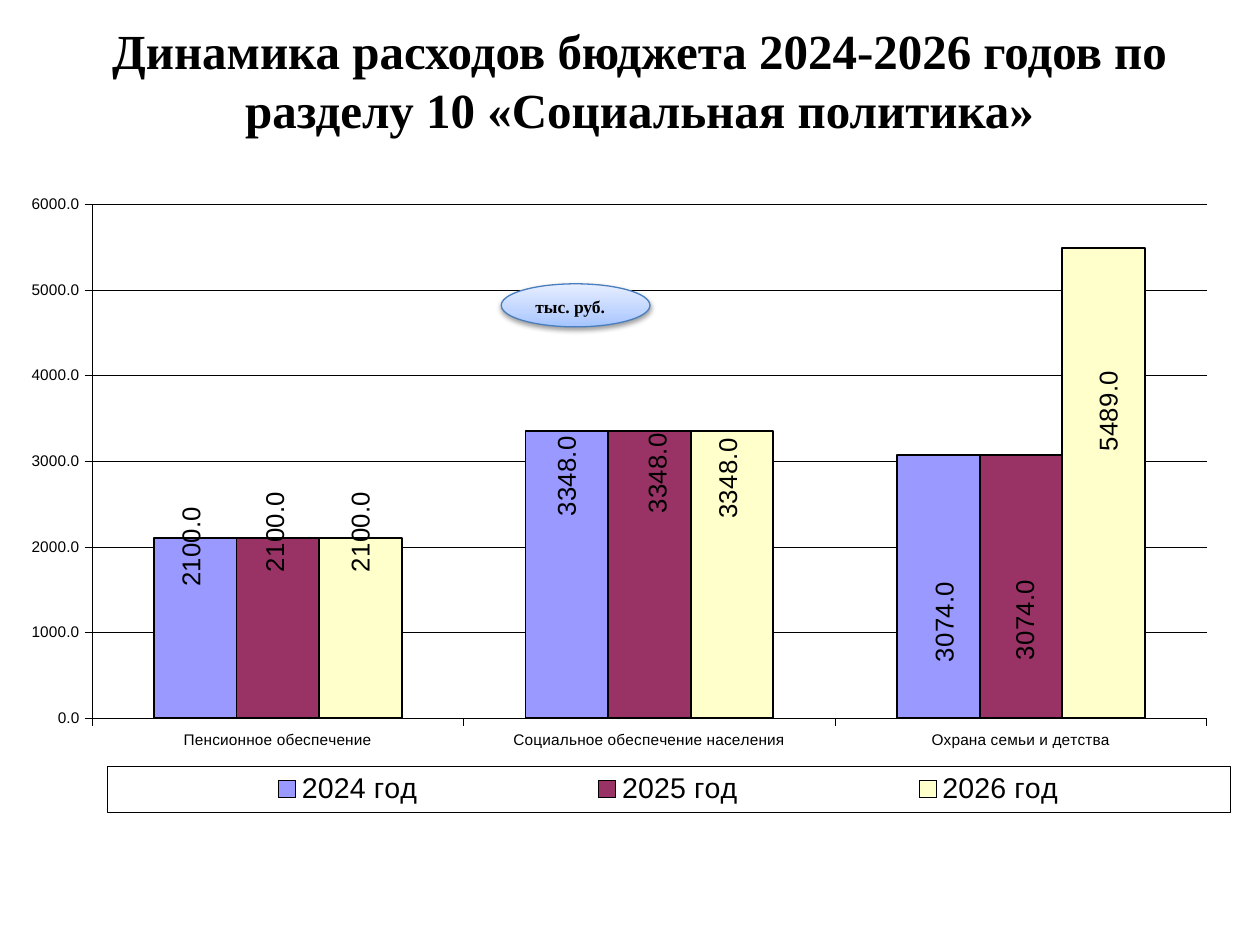
from pptx import Presentation
from pptx import util as u
from pptx.chart import data as chart_data
from pptx.dml import color
from pptx.enum import chart as kinds, shapes, text
from pptx.oxml import ns, parse_xml

COLORS = {
    "ink": "000000", "2024": "9999FF", "2025": "993366", "2026": "FFFFCC",
    "badge_low": "A4C4FF", "badge_mid": "BFD4FF", "badge_top": "E6EEFF",
    "badge_line": "4B7EBC",
}
CHART_BOX = (4.3, 103.7, 700, 362.2)
NUMBER_FORMAT = "0.0"
CATEGORIES = ["Пенсионное обеспечение", "Социальное обеспечение населения",
              "Охрана семьи и детства"]
SPENDING = {
    "2024": (2100, 3348, 3074),
    "2025": (2100, 3348, 3074),
    "2026": (2100, 3348, 5489),
}
LABEL_SHIFTS = {
    "2024": ((-2.3, -46.6), (0, -56.3), (3.4, 20.3)),
    "2025": ((-1.7, -55.1), (4.6, -58), (2.3, 19.1)),
    "2026": ((0, -55.1), (-2.3, -55.1), (2.9, -41.1)),
}


def rgb(name):
    """Return the named colour."""
    return color.RGBColor.from_string(COLORS[name])


def points(values):
    """Turn numbers into point lengths."""
    return [u.Pt(value) for value in values]


def style_font(font, size, name="Arial", bold=False):
    """Set a font's face, size, weight and ink."""
    font.name, font.size, font.bold = name, u.Pt(size), bold
    font.color.rgb = rgb("ink")


def style_line(line, width, name="ink"):
    """Set a line's colour and width."""
    line.color.rgb = rgb(name)
    line.width = u.Pt(width)


def write(frame, words, size, align):
    """Write one bold serif paragraph into a text frame."""
    frame.word_wrap = True
    para = frame.paragraphs[0]
    para.alignment = align
    span = para.add_run()
    span.text = words
    style_font(span.font, size, "Times New Roman", True)


def place(element, index, **parts):
    """Give a chart element a manual layout at a child index."""
    for old in element.findall(ns.qn("c:layout")):
        element.remove(old)
    body = "".join(f'<c:{tag} val="{value}"/>' for tag, value in parts.items())
    element.insert(index, parse_xml(
        f'<c:layout {ns.nsdecls("c")}><c:manualLayout>{body}</c:manualLayout></c:layout>'))


def add_title(page, words):
    """Add the centred slide title."""
    box = page.shapes.add_textbox(*points((36, 30.2, 658.8, 30.2)))
    box.text_frame.vertical_anchor = text.MSO_ANCHOR.MIDDLE
    write(box.text_frame, words, 28, text.PP_ALIGN.CENTER)


def style_axes(chart):
    """Style both axes and the gridlines."""
    for axis in (chart.category_axis, chart.value_axis):
        style_font(axis.tick_labels.font, 8.8)
        style_line(axis.format.line, 0.28)
        axis.major_tick_mark = kinds.XL_TICK_MARK.OUTSIDE
        axis.minor_tick_mark = kinds.XL_TICK_MARK.NONE
    chart.category_axis.tick_label_position = kinds.XL_TICK_LABEL_POSITION.LOW
    values = chart.value_axis
    values.minimum_scale, values.maximum_scale, values.major_unit = 0, 6000, 1000
    values.tick_labels.number_format = NUMBER_FORMAT
    values.tick_labels.number_format_is_linked = False
    values.has_major_gridlines = True
    style_line(values.major_gridlines.format.line, 0.28)


def style_label(label, shift):
    """Turn a data label upright and move it from the bar's centre."""
    style_font(label.font, 14.7)
    label.position = kinds.XL_LABEL_POSITION.CENTER
    element = label._dLbl
    body = element.find(".//" + ns.qn("a:bodyPr"))
    body.set("rot", "-5400000")
    body.set("vert", "horz")
    place(element, 1, x=round(shift[0] / CHART_BOX[2], 4),
          y=round(shift[1] / CHART_BOX[3], 4))


def hide_leader_lines(labels):
    """Switch off the lines that join moved labels to their bars."""
    element = labels._element
    for old in element.findall(ns.qn("c:showLeaderLines")):
        element.remove(old)
    element.append(parse_xml(f'<c:showLeaderLines {ns.nsdecls("c")} val="0"/>'))


def style_series(series, year):
    """Colour one year's bars and set its labels."""
    series.format.fill.solid()
    series.format.fill.fore_color.rgb = rgb(year)
    series.invert_if_negative = False
    style_line(series.format.line, 1.11)
    labels = series.data_labels
    labels.show_value = True
    labels.number_format = NUMBER_FORMAT
    labels.number_format_is_linked = False
    style_font(labels.font, 14.7)
    for index, shift in enumerate(LABEL_SHIFTS[year]):
        style_label(series.points[index].data_label, shift)
    hide_leader_lines(labels)


def style_legend(chart):
    """Show a framed legend below the plot."""
    chart.has_legend = True
    legend = chart.legend
    legend.position = kinds.XL_LEGEND_POSITION.BOTTOM
    legend.include_in_layout = False
    style_font(legend.font, 16.3)
    element = legend._element
    place(element, 1, xMode="edge", yMode="edge", x=0.081, y=0.922, w=0.917, h=0.073)
    element.find(ns.qn("c:txPr")).addprevious(parse_xml(
        f'<c:spPr {ns.nsdecls("c", "a")}><a:noFill/><a:ln w="{u.Pt(0.28)}"><a:solidFill>'
        f'<a:srgbClr val="{COLORS["ink"]}"/></a:solidFill></a:ln></c:spPr>'))


def add_spending_chart(page):
    """Add the clustered columns of spending by year."""
    figures = chart_data.CategoryChartData(number_format=NUMBER_FORMAT)
    figures.categories = CATEGORIES
    for year, values in SPENDING.items():
        figures.add_series(f"{year} год", values)
    chart = page.shapes.add_chart(
        kinds.XL_CHART_TYPE.COLUMN_CLUSTERED, *points(CHART_BOX), figures).chart
    chart.has_title = False
    style_font(chart.font, 8.8)
    plot = chart.plots[0]
    plot.gap_width, plot.overlap, plot.vary_by_categories = 150, 0, False
    style_axes(chart)
    for year, series in zip(SPENDING, plot.series):
        style_series(series, year)
    style_legend(chart)
    area = chart._chartSpace.find(".//" + ns.qn("c:plotArea"))
    place(area, 0, layoutTarget="inner", xMode="edge", yMode="edge",
          x=0.069, y=0.036, w=0.91, h=0.811)


def add_unit_badge(page, words):
    """Add the shaded ellipse that names the unit."""
    badge = page.shapes.add_shape(
        shapes.MSO_SHAPE.OVAL, *points((286.4, 162.2, 85, 24.6)))
    badge.fill.gradient()
    badge.fill.gradient_angle = 90
    stops = ((0, "badge_low"), (35, "badge_mid"), (100, "badge_top"))
    stop_list = badge._element.spPr.find(".//" + ns.qn("a:gsLst"))
    for old in list(stop_list):
        stop_list.remove(old)
    for position, name in stops:
        stop_list.append(parse_xml(
            f'<a:gs {ns.nsdecls("a")} pos="{position * 1000}">'
            f'<a:srgbClr val="{COLORS[name]}"/></a:gs>'))
    style_line(badge.line, 0.75, "badge_line")
    badge._element.spPr.append(parse_xml(
        f'<a:effectLst {ns.nsdecls("a")}><a:outerShdw blurRad="{u.Pt(3.1)}" '
        f'dist="{u.Pt(1.6)}" dir="5400000" rotWithShape="0">'
        f'<a:srgbClr val="{COLORS["ink"]}"><a:alpha val="38000"/></a:srgbClr>'
        '</a:outerShdw></a:effectLst>'))
    badge.text_frame.vertical_anchor = text.MSO_ANCHOR.TOP
    write(badge.text_frame, words, 10, text.PP_ALIGN.LEFT)


def main():
    """Build and save the slide."""
    deck = Presentation()
    deck.slide_width, deck.slide_height = points((720, 540))
    page = deck.slides.add_slide(deck.slide_layouts[6])
    add_spending_chart(page)
    add_title(page, "Динамика расходов бюджета 2024-2026 годов по "
                    "разделу 10 «Социальная политика»")
    add_unit_badge(page, "тыс. руб.")
    deck.save("out.pptx")


if __name__ == "__main__":
    main()
